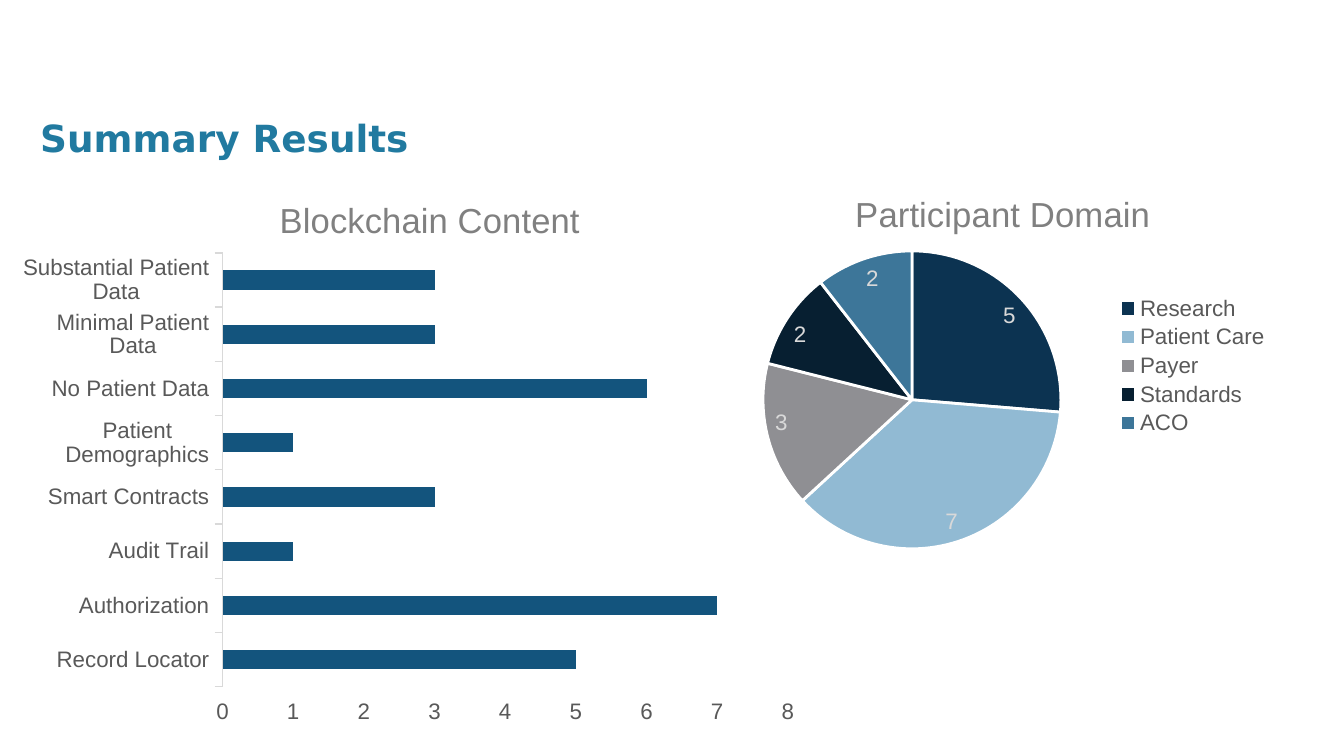
from lxml import etree
from pptx import Presentation
from pptx import util as u
from pptx.chart.data import CategoryChartData
from pptx.dml.color import RGBColor
from pptx.enum import chart as c
from pptx.oxml.ns import qn

PX = 914400 / 134.4
GREY = "595959"


def color(value):
    return RGBColor.from_string(value)


def place(part, tag_index, frame, area, inner=False):
    for old in part.findall(qn("c:layout")):
        part.remove(old)
    layout = etree.Element(qn("c:layout"))
    manual = etree.SubElement(layout, qn("c:manualLayout"))
    values = [("xMode", "edge"), ("yMode", "edge")]
    if inner:
        values.insert(0, ("layoutTarget", "inner"))
    left, top, width, height = frame
    fractions = [(area[0] - left) / width, (area[1] - top) / height]
    fractions += [size / total for size, total in zip(area[2:], (width, height))]
    values += [(name, str(round(value, 4))) for name, value in zip("xywh", fractions)]
    for name, value in values:
        etree.SubElement(manual, qn(f"c:{name}")).set("val", value)
    part.insert(tag_index, layout)


deck = Presentation()
deck.slide_width, deck.slide_height = u.Emu(round(1344 * PX)), u.Emu(round(756 * PX))
page = deck.slides.add_slide(deck.slide_layouts[6])

box = page.shapes.add_textbox(*[round(n * PX) for n in (27, 109, 1271, 89)])
box.text_frame.word_wrap = True
para = box.text_frame.paragraphs[0]
para.text = "Summary Results"
para.font.name = "DejaVu Sans"
para.font.size = u.Pt(20)
para.font.bold = True
para.font.color.rgb = color("217AA0")

domains = {"Research": 5, "Patient Care": 7, "Payer": 3, "Standards": 2, "ACO": 2}
contents = {
    "Record Locator": 5,
    "Authorization": 7,
    "Audit Trail": 1,
    "Smart Contracts": 3,
    "Patient Demographics": 1,
    "No Patient Data": 6,
    "Minimal Patient Data": 3,
    "Substantial Patient Data": 3,
}
pie_frame = (708, 164, 575, 404)
bar_frame = (23, 164, 786, 572)
charts = []
for kind, title, counts, frame, title_at, plot_area in [
    (c.XL_CHART_TYPE.PIE, "Participant Domain", domains,
     pie_frame, (849, 185), (763, 251, 298, 298)),
    (c.XL_CHART_TYPE.BAR_CLUSTERED, "Blockchain Content", contents,
     bar_frame, (272, 191), (221, 253, 567, 434)),
]:
    data = CategoryChartData()
    data.categories = list(counts)
    data.add_series("Series 1", list(counts.values()))
    chart = page.shapes.add_chart(kind, *[round(n * PX) for n in frame], data).chart
    chart.font.name = "Arial"
    chart.font.size = u.Pt(12)
    chart.font.color.rgb = color(GREY)
    para = chart.chart_title.text_frame.paragraphs[0]
    para.text = title
    para.font.name = "Arial"
    para.font.size = u.Pt(18.6)
    para.font.bold = False
    para.font.color.rgb = color("808080")
    chart.chart_title.include_in_layout = False
    space = chart.element if hasattr(chart, "element") else chart._chartSpace
    root = space.find(qn("c:chart"))
    place(root.find(qn("c:title")), 1, frame, title_at)
    place(root.find(qn("c:plotArea")), 0, frame, plot_area, inner=True)
    background = etree.Element(qn("c:spPr"))
    etree.SubElement(background, qn("a:noFill"))
    etree.SubElement(etree.SubElement(background, qn("a:ln")), qn("a:noFill"))
    root.addnext(background)
    charts.append((chart, root))

(pie, pie_root), (bar, bar_root) = charts

pie.has_legend = True
pie.legend.position = c.XL_LEGEND_POSITION.RIGHT
pie.legend.include_in_layout = False
pie.legend.font.name = "Arial"
pie.legend.font.size = u.Pt(12)
pie.legend.font.color.rgb = color(GREY)
place(pie_root.find(qn("c:legend")), 1, pie_frame, (1114, 292, 158, 148))

plot = pie.plots[0]
plot.vary_by_categories = True
for index, shade in enumerate(["0C3351", "91BAD3", "8F8F93", "071F31", "3D7699"]):
    look = plot.series[0].points[index].format
    look.fill.solid()
    look.fill.fore_color.rgb = color(shade)
    look.line.color.rgb = color("FFFFFF")
    look.line.width = u.Pt(1.5)
plot.has_data_labels = True
labels = plot.data_labels
labels.show_value = True
labels.show_percentage = False
labels.position = c.XL_LABEL_POSITION.INSIDE_END
labels.font.name = "Arial"
labels.font.size = u.Pt(12)
labels.font.color.rgb = color("D9D9D9")

bar.has_legend = False
plot = bar.plots[0]
plot.vary_by_categories = False
plot.gap_width = 182
fill = plot.series[0].format.fill
fill.solid()
fill.fore_color.rgb = color("13547D")
for axis in (bar.category_axis, bar.value_axis):
    axis.has_major_gridlines = False
    axis.major_tick_mark = c.XL_TICK_MARK.OUTSIDE
    axis.minor_tick_mark = c.XL_TICK_MARK.NONE
    axis.tick_labels.font.name = "Arial"
    axis.tick_labels.font.size = u.Pt(12)
    axis.tick_labels.font.color.rgb = color(GREY)
bar.category_axis.format.line.color.rgb = color("D9D9D9")
bar.category_axis.format.line.width = u.Pt(0.75)
bar.value_axis.format.line.fill.background()
bar.value_axis.minimum_scale = 0
bar.value_axis.maximum_scale = 8
bar.value_axis.major_unit = 1

deck.save("out.pptx")
